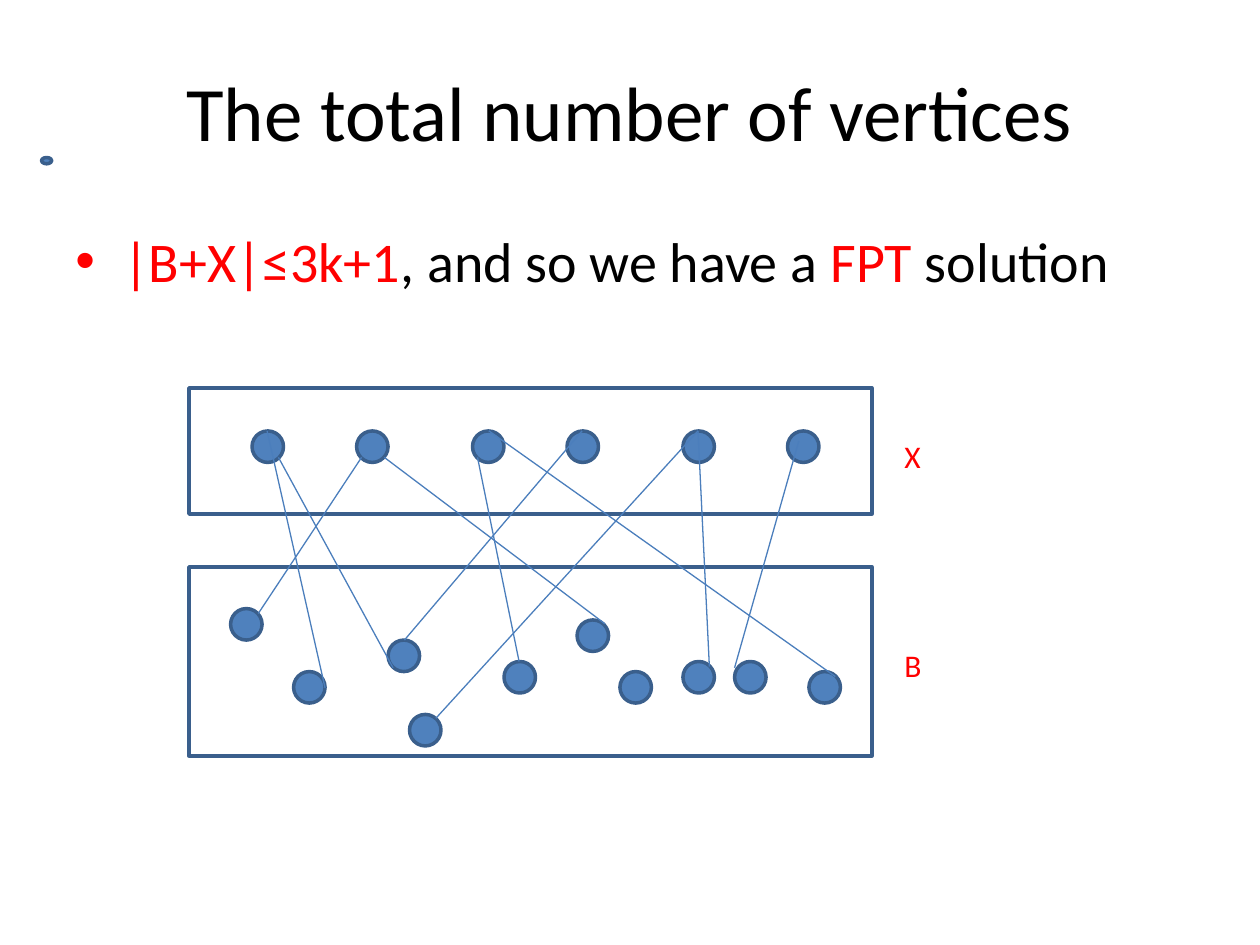
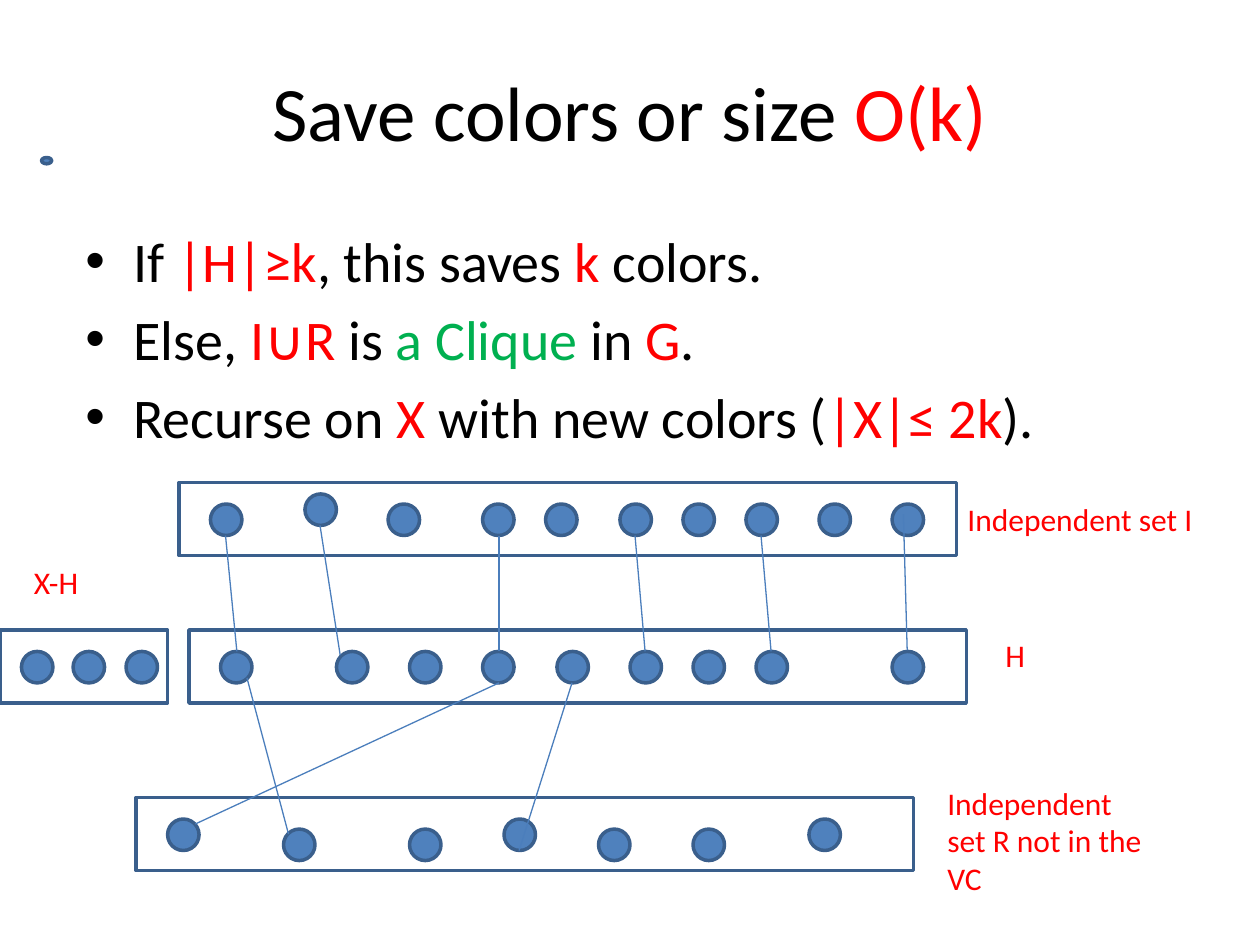
from dataclasses import dataclass

from lxml.etree import SubElement
from pptx import Presentation
from pptx.dml.color import RGBColor as RGB
from pptx.enum.shapes import MSO_CONNECTOR as CONN, MSO_SHAPE as SHAPE
from pptx.enum.text import MSO_ANCHOR as ANCHOR, PP_ALIGN as ALIGN
from pptx.oxml.ns import qn
from pptx.util import Inches, Pt


@dataclass(frozen=True)
class Theme:
    font: str = "Calibri"
    ink: str = "000000"
    red: str = "FF0000"
    green: str = "00B050"
    node: str = "4F81BD"
    outline: str = "3A5F8C"
    edge: str = "4B7EBC"
    title_size: int = 44
    body_size: int = 32
    label_size: int = 18
    outline_width: float = 2
    edge_width: float = 0.75
    node_size: float = 0.25
    indent: float = 0.38


T = Theme()


def red(text):
    return text, T.red


def green(text):
    return text, T.green


def add_bullet(p):
    pPr = p._p.get_or_add_pPr()
    pPr.set("marL", str(Inches(T.indent)))
    pPr.set("indent", str(-Inches(T.indent)))
    SubElement(pPr, qn("a:buFont"), typeface="Arial")
    SubElement(pPr, qn("a:buChar"), char="•")


def add_text(s, box, paragraphs, size=T.label_size, color=T.ink,
             align=ALIGN.LEFT, anchor=ANCHOR.TOP, before=0, bullet=False):
    tf = s.shapes.add_textbox(*map(Inches, box)).text_frame
    tf.word_wrap = True
    tf.vertical_anchor = anchor
    for i, runs in enumerate(paragraphs):
        p = tf.add_paragraph() if i else tf.paragraphs[0]
        p.alignment = align
        p.space_before = Pt(before)
        if bullet:
            add_bullet(p)
        for run in runs:
            text, run_color = (run, color) if isinstance(run, str) else run
            r = p.add_run()
            r.text = text
            r.font.name = T.font
            r.font.size = Pt(size)
            r.font.color.rgb = RGB.from_string(run_color)


def add_label(s, left, top, width, text, height=0.4):
    add_text(s, (left, top, width, height), [[text]], color=T.red)


def add_outlined(s, kind, box, fill=None):
    sp = s.shapes.add_shape(kind, *map(Inches, box))
    sp.shadow.inherit = False
    if fill:
        sp.fill.solid()
        sp.fill.fore_color.rgb = RGB.from_string(fill)
    else:
        sp.fill.background()
    sp.line.color.rgb = RGB.from_string(T.outline)
    sp.line.width = Pt(T.outline_width)


def add_set(s, left, top, width, height):
    add_outlined(s, SHAPE.RECTANGLE, (left, top, width, height))


def add_nodes(s, top, lefts):
    for left in lefts:
        add_outlined(s, SHAPE.OVAL, (left, top, T.node_size, T.node_size), T.node)


def add_edges(s, edges):
    for ends in edges:
        line = s.shapes.add_connector(CONN.STRAIGHT, *map(Inches, ends))
        line.line.color.rgb = RGB.from_string(T.edge)
        line.line.width = Pt(T.edge_width)
        SubElement(line._element.spPr, qn("a:effectLst"))


def add_slide(prs, title, bullets, body_left):
    s = prs.slides.add_slide(prs.slide_layouts[6])
    add_text(s, (0.5, 0.25, 9, 1.25), [title], size=T.title_size,
             align=ALIGN.CENTER, anchor=ANCHOR.MIDDLE)
    add_text(s, (body_left, 1.75, 9, 4.95), bullets, size=T.body_size,
             before=6, bullet=True)
    add_outlined(s, SHAPE.OVAL, (0.33, 1.25, 0.08, 0.05), T.node)
    return s


def build_vertex_count(prs):
    s = add_slide(prs, ["The total number of vertices"], [
        [red("|B+X|≤3k+1"), ", and so we have a ", red("FPT"), " solution"],
    ], body_left=0.5)

    add_set(s, 1.5, 3.08, 5.42, 1)
    add_nodes(s, 3.42, [2, 2.83, 3.75, 4.5, 5.42, 6.25])
    add_label(s, 7.08, 3.42, 1.33, "X")

    add_set(s, 1.5, 4.5, 5.42, 1.5)
    b_nodes = {
        4.83: [1.83],
        4.92: [4.58],
        5.08: [3.08],
        5.25: [4, 5.42, 5.83],
        5.33: [2.33, 4.92, 6.42],
        5.67: [3.25],
    }
    for top, lefts in b_nodes.items():
        add_nodes(s, top, lefts)
    add_label(s, 7.08, 5.08, 1.75, "B")

    add_edges(s, [
        (2.05, 4.87, 2.87, 3.63),
        (3.12, 5.3, 2.21, 3.63),
        (4.8, 4.95, 3.05, 3.63),
        (3.21, 5.08, 4.62, 3.42),
        (4.12, 5.25, 3.79, 3.63),
        (5.63, 5.29, 5.54, 3.42),
        (5.83, 5.3, 6.34, 3.5),
        (6.63, 5.37, 3.88, 3.42),
        (3.46, 5.7, 5.54, 3.42),
        (2.58, 5.46, 2.12, 3.42),
    ])


def build_color_saving(prs):
    s = add_slide(prs, ["Save colors or size ", red("O(k)")], [
        ["If ", red("|H|≥k"), ", this saves", red(" k "), "colors."],
        ["Else,", red(" I∪R "), "is ", green("a Clique "), "in ", red("G"), "."],
        ["Recurse on ", red("X"), " with new colors (", red("|X|≤ 2k"), ")."],
    ], body_left=0.58)

    row_width, row_height = 6.17, 0.58
    for left, top in [(1.42, 3.83), (1.5, 5), (1.08, 6.33)]:
        add_set(s, left, top, row_width, row_height)
    add_set(s, 0, 5, 1.33, row_height)

    independent_i = [1.67, 3.08, 3.83, 4.33, 4.92, 5.42, 5.92, 6.5, 7.08]
    h = [1.75, 2.67, 3.25, 3.83, 4.42, 5, 5.5, 6, 7.08]
    x_minus_h = [0.17, 0.58, 1]
    add_nodes(s, 3.92, [2.42])
    add_nodes(s, 4, independent_i)
    add_nodes(s, 5.17, x_minus_h + h)
    add_nodes(s, 6.5, [1.33, 4, 6.42])
    add_nodes(s, 6.58, [2.25, 3.25, 4.75, 5.5])

    add_edges(s, [
        (1.79, 4.25, 1.88, 5.17),
        (2.54, 4.17, 2.7, 5.2),
        (3.96, 4.25, 3.96, 5.17),
        (5.04, 4.25, 5.12, 5.17),
        (6.04, 4.25, 6.12, 5.17),
        (7.17, 4.08, 7.2, 5.16),
        (4.54, 5.42, 4.12, 6.75),
        (1.96, 5.38, 2.29, 6.62),
        (1.55, 6.54, 3.96, 5.42),
    ])

    add_label(s, 7.58, 3.92, 2.92, "Independent set I")
    add_label(s, 0.17, 4.42, 1.17, "X-H")
    add_label(s, 7.88, 5, 1.78, "H")
    add_label(s, 7.42, 6.17, 1.75, "Independent set R not in the VC", height=1.01)


def main():
    prs = Presentation()
    prs.slide_width, prs.slide_height = Inches(10), Inches(7.5)
    build_vertex_count(prs)
    build_color_saving(prs)
    prs.save("out.pptx")


if __name__ == "__main__":
    main()
